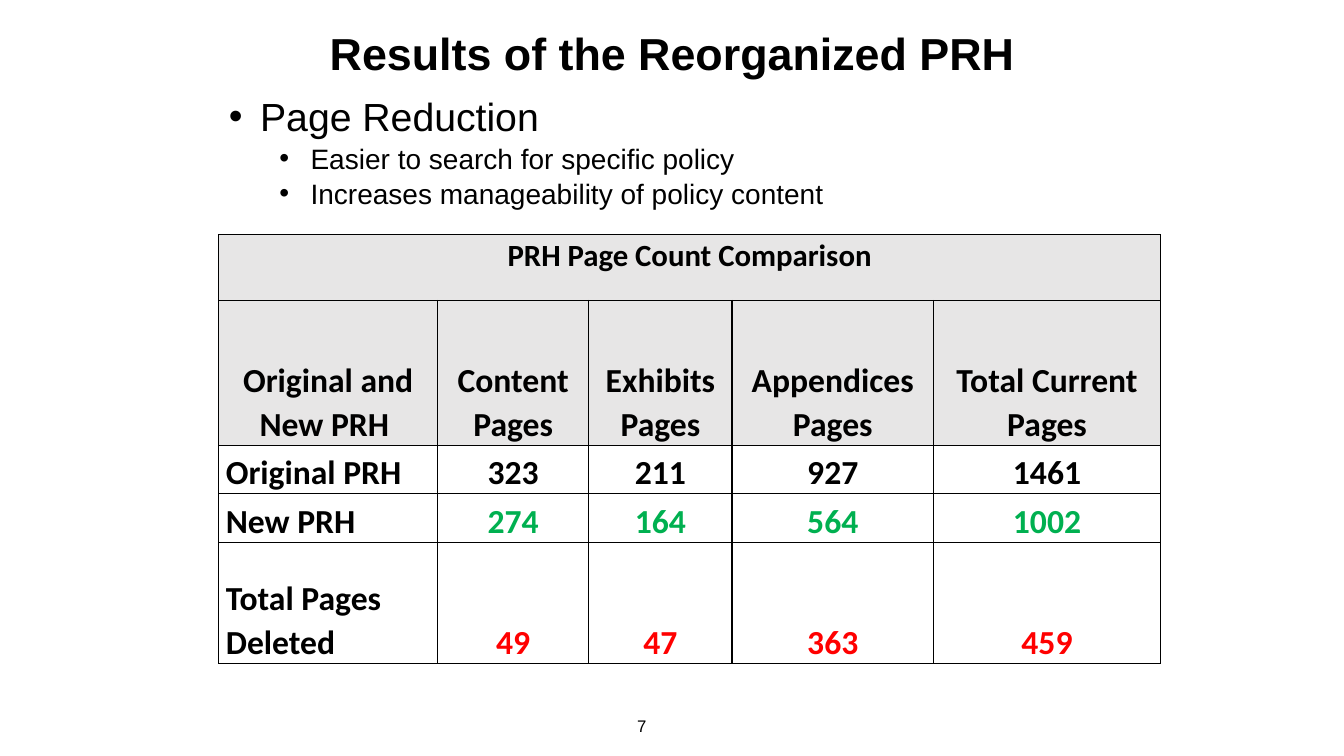
import pptx
import pptx.util
import pptx.dml.color
import pptx.enum.text
import pptx.oxml
import pptx.oxml.ns

Inches = pptx.util.Inches
Pt = pptx.util.Pt
ALIGN = pptx.enum.text.PP_ALIGN
ANCHOR = pptx.enum.text.MSO_ANCHOR

COLORS = {
    "text": "000000",
    "header": "E7E6E6",
    "body": "FFFFFF",
    "new": "00B050",
    "deleted": "FF0000",
}

BULLETS = [
    (0, "Page Reduction"),
    (1, "Easier to search for specific policy"),
    (1, "Increases manageability of policy content"),
]

COLUMN_WIDTHS = [2.17, 1.5, 1.42, 2, 2.25]
# Each row: height, fill, colour of the counts, cell texts
PAGE_COUNTS = [
    (0.65, "header", "text", ["PRH Page Count Comparison", "", "", "", ""]),
    (1.44, "header", "text", ["Original and New PRH ", "Content Pages", "Exhibits Pages",
                              "Appendices Pages", "Total Current Pages"]),
    (0.48, "body", "text", ["Original PRH", "323", "211", "927", "1461"]),
    (0.48, "body", "new", ["New PRH", "274", "164", "564", "1002"]),
    (1.2, "body", "deleted", ["Total Pages Deleted", "49", "47", "363", "459"]),
]


def rgb(name):
    return pptx.dml.color.RGBColor.from_string(COLORS[name])


def place(shape, box):
    shape.left, shape.top, shape.width, shape.height = (Inches(length) for length in box)


def add_run(paragraph, text, size, font="Arial", color="text", bold=False):
    run = paragraph.add_run()
    run.text = text
    run.font.name = font
    run.font.size = Pt(size)
    run.font.bold = bold
    run.font.color.rgb = rgb(color)


def add_title(slide, box):
    title = slide.shapes.title
    place(title, box)
    title.text_frame.vertical_anchor = ANCHOR.MIDDLE
    paragraph = title.text_frame.paragraphs[0]
    paragraph.alignment = ALIGN.CENTER
    add_run(paragraph, "Results of the Reorganized PRH", 32, bold=True)


def add_bullets(slide, box):
    body = slide.placeholders[1]
    place(body, box)
    frame = body.text_frame
    for index, (level, text) in enumerate(BULLETS):
        paragraph = frame.add_paragraph() if index else frame.paragraphs[0]
        paragraph.level = level
        paragraph.space_before = Pt(1 if index else 0)
        properties = paragraph._p.get_or_add_pPr()
        properties.set("marL", str(Inches(0.31 + 0.5 * level)))
        properties.set("indent", str(Inches(-0.31)))
        for tag, name, value in (("buFont", "typeface", "Arial"), ("buChar", "char", "•")):
            properties.append(pptx.oxml.parse_xml(
                f'<a:{tag} {pptx.oxml.ns.nsdecls("a")} {name}="{value}"/>'))
        add_run(paragraph, text, 20 if level else 28)


def add_borders(cell):
    properties = cell._tc.get_or_add_tcPr()
    for side in "LRTB":
        properties.append(pptx.oxml.parse_xml(
            f'<a:ln{side} {pptx.oxml.ns.nsdecls("a")} w="{Pt(1)}"><a:solidFill>'
            f'<a:srgbClr val="{COLORS["text"]}"/></a:solidFill></a:ln{side}>'))


def add_page_table(slide, box):
    graphic = slide.shapes.add_table(len(PAGE_COUNTS), len(COLUMN_WIDTHS),
                                     *(Inches(length) for length in box))
    table = graphic.table
    table.first_row = table.horz_banding = False
    for column, width in zip(table.columns, COLUMN_WIDTHS):
        column.width = Inches(width)

    for row, (height, fill, count_color, texts) in enumerate(PAGE_COUNTS):
        table.rows[row].height = Inches(height)
        for column, text in enumerate(texts):
            cell = table.cell(row, column)
            add_borders(cell)
            cell.fill.solid()
            cell.fill.fore_color.rgb = rgb(fill)
            cell.margin_left = cell.margin_right = Inches(0.07)
            cell.margin_top = cell.margin_bottom = 0
            cell.vertical_anchor = ANCHOR.BOTTOM if row else ANCHOR.TOP
            if not text:
                continue
            paragraph = cell.text_frame.paragraphs[0]
            is_label = fill == "body" and column == 0
            paragraph.alignment = ALIGN.LEFT if is_label else ALIGN.CENTER
            paragraph.line_spacing = 1.07
            add_run(paragraph, text, 24 if row else 22, "Calibri",
                    "text" if is_label else count_color, bold=True)
    table.cell(0, 0).merge(table.cell(0, len(COLUMN_WIDTHS) - 1))


def add_page_number(slide, box):
    frame = slide.shapes.add_textbox(*(Inches(length) for length in box)).text_frame
    frame.word_wrap = True
    frame.vertical_anchor = ANCHOR.MIDDLE
    paragraph = frame.paragraphs[0]
    paragraph.alignment = ALIGN.RIGHT
    add_run(paragraph, "7", 12)


def main():
    presentation = pptx.Presentation()
    presentation.slide_width = Inches(13.33)
    presentation.slide_height = Inches(7.5)
    slide = presentation.slides.add_slide(presentation.slide_layouts[1])
    add_title(slide, (2.17, 0.3, 9, 0.45))
    add_page_table(slide, (2.17, 2.33, sum(COLUMN_WIDTHS), sum(row[0] for row in PAGE_COUNTS)))
    add_bullets(slide, (2.17, 0.87, 9.62, 1.25))
    add_page_number(slide, (3.4, 7, 3.11, 0.4))
    presentation.save("out.pptx")


if __name__ == "__main__":
    main()
